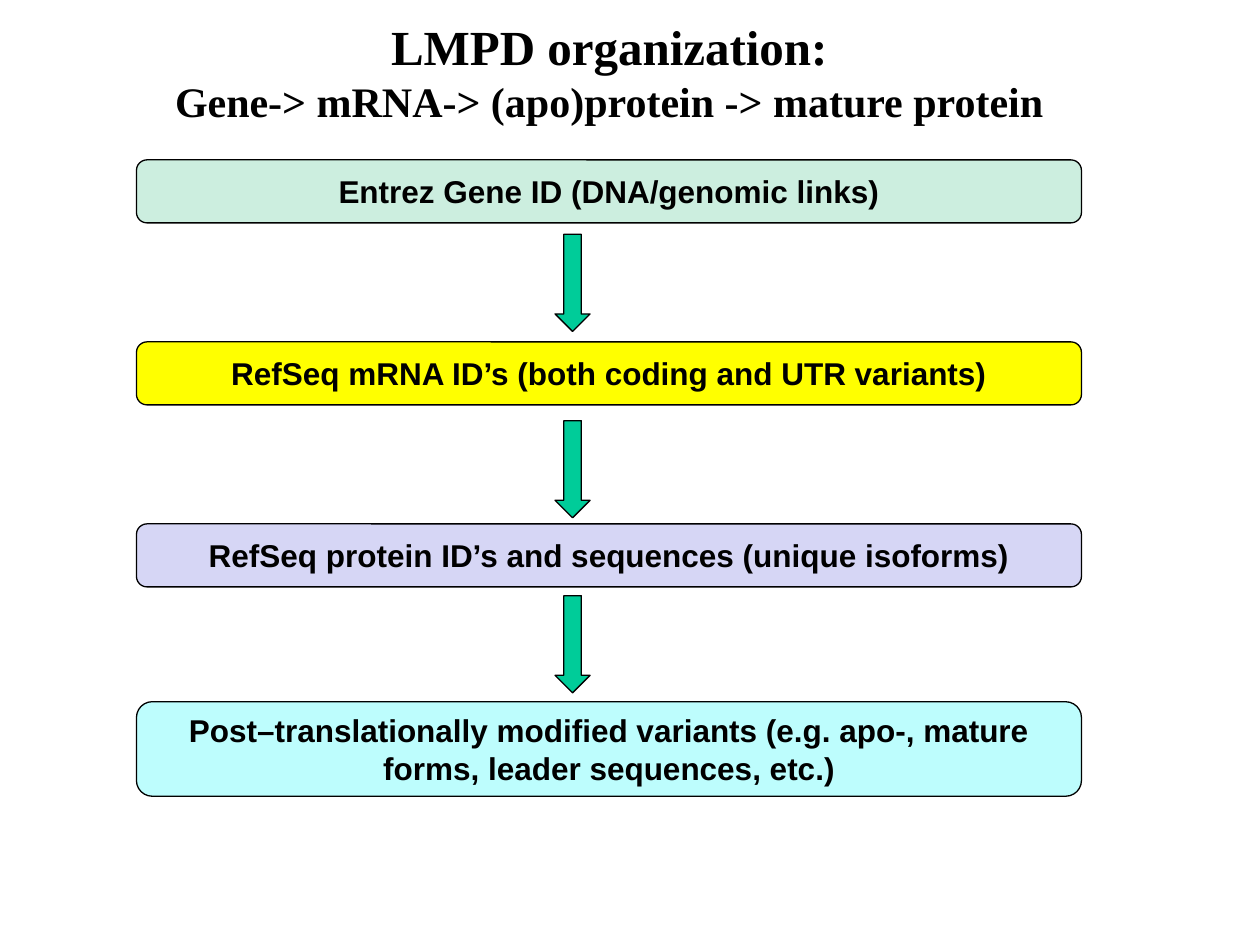
from dataclasses import dataclass

from pptx import Presentation
from pptx.dml.color import RGBColor
from pptx.enum.shapes import MSO_SHAPE
from pptx.enum.text import MSO_ANCHOR, PP_ALIGN
from pptx.util import Pt


@dataclass(frozen=True)
class Theme:
    """Colours, fonts and sizes of the slide."""
    ink: str = "000000"
    arrow: str = "00CC99"
    gene: str = "CCEEDF"
    mrna: str = "FFFF00"
    protein: str = "D6D6F5"
    variants: str = "BDFDFD"
    title_font: str = "Times New Roman"
    body_font: str = "Arial"
    title_size: int = 28
    subtitle_size: int = 24
    body_size: int = 18
    line_width: float = 0.75


THEME = Theme()


def write_lines(shape, lines, font_name, sizes):
    """Fill a shape with centred bold lines, one paragraph each."""
    text_frame = shape.text_frame
    text_frame.word_wrap = True
    text_frame.vertical_anchor = MSO_ANCHOR.MIDDLE
    text_frame.text = "\n".join(lines)
    for paragraph, size in zip(text_frame.paragraphs, sizes):
        paragraph.alignment = PP_ALIGN.CENTER
        for run in paragraph.runs:
            run.font.name = font_name
            run.font.size = Pt(size)
            run.font.bold = True
            run.font.color.rgb = RGBColor.from_string(THEME.ink)


def add_outlined(slide, kind, box, fill):
    """Add a filled preset shape with a thin outline."""
    shape = slide.shapes.add_shape(kind, *map(Pt, box))
    shape.shadow.inherit = False
    shape.fill.solid()
    shape.fill.fore_color.rgb = RGBColor.from_string(fill)
    shape.line.color.rgb = RGBColor.from_string(THEME.ink)
    shape.line.width = Pt(THEME.line_width)
    return shape


def add_title(slide, box):
    """Place the two-line heading in its box."""
    title = slide.shapes.add_textbox(*map(Pt, box))
    lines = ["LMPD organization:", "Gene-> mRNA-> (apo)protein -> mature protein"]
    write_lines(title, lines, THEME.title_font, [THEME.title_size, THEME.subtitle_size])


def add_flow(slide, box):
    """Stack the four stages in the box, with a down arrow after all but the last."""
    left, top, width, height = box
    arrow_width, arrow_height = 20, 55.5
    arrow_left = left + width / 2 - 30.8
    stages = [
        (0, 36, THEME.gene, "Entrez Gene ID (DNA/genomic links)", 42.5),
        (104, 36, THEME.mrna, "RefSeq mRNA ID’s (both coding and UTR variants)", 149),
        (208, 36, THEME.protein, "RefSeq protein ID’s and sequences (unique isoforms)", 249),
        (height - 54, 54, THEME.variants,
         "Post–translationally modified variants (e.g. apo-, mature forms, "
         "leader sequences, etc.)", None),
    ]
    for offset, stage_height, fill, label, arrow_offset in stages:
        stage = add_outlined(slide, MSO_SHAPE.ROUNDED_RECTANGLE,
                             (left, top + offset, width, stage_height), fill)
        write_lines(stage, [label], THEME.body_font, [THEME.body_size])
        if arrow_offset is not None:
            add_outlined(slide, MSO_SHAPE.DOWN_ARROW,
                         (arrow_left, top + arrow_offset, arrow_width, arrow_height),
                         THEME.arrow)


def main():
    """Build and save the slide."""
    presentation = Presentation()
    presentation.slide_width = Pt(720)
    presentation.slide_height = Pt(540)
    slide = presentation.slides.add_slide(presentation.slide_layouts[6])
    add_flow(slide, (78, 91.4, 540, 363.6))
    add_title(slide, (17.3, 15.1, 661.7, 51.1))
    presentation.save("out.pptx")


if __name__ == "__main__":
    main()
